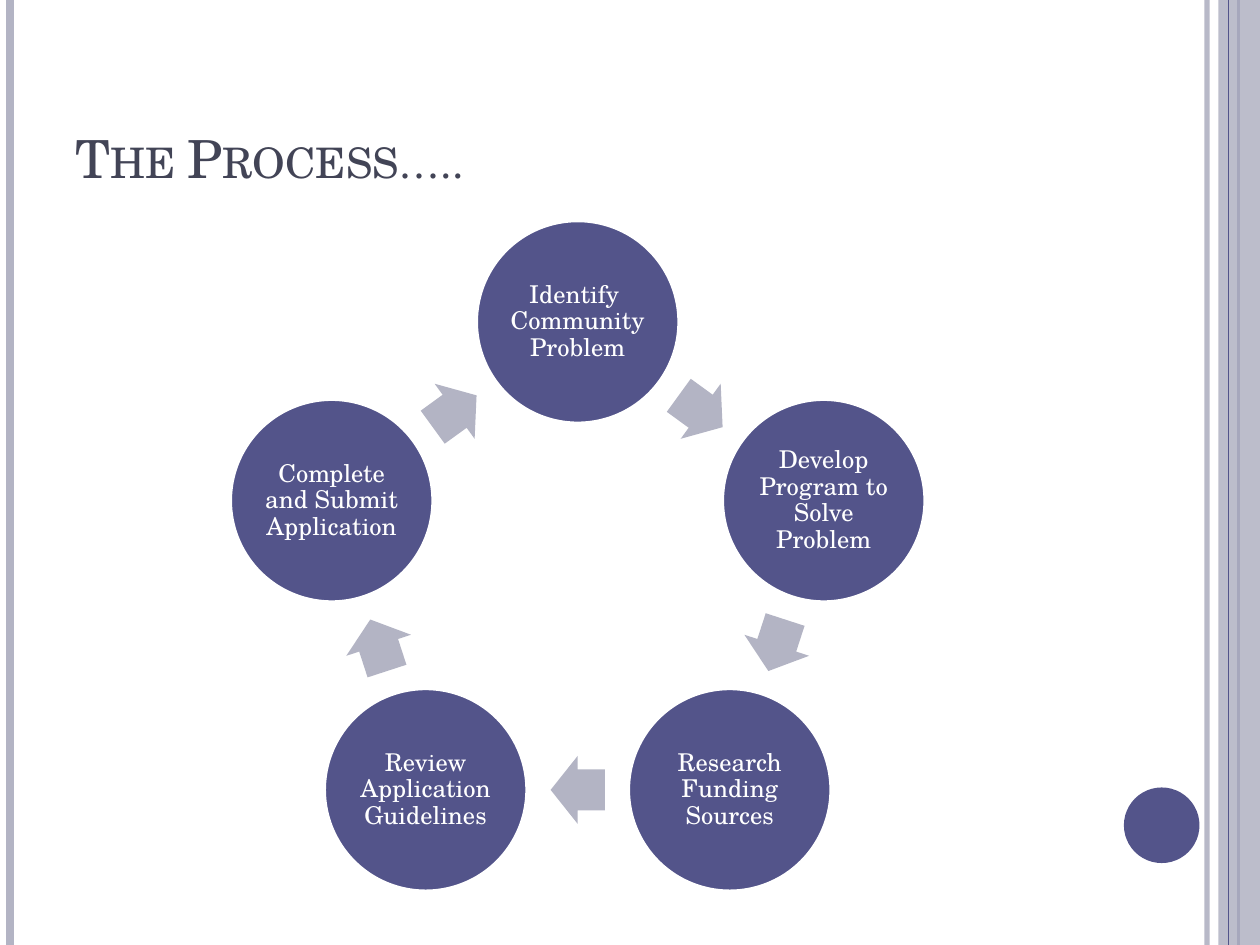
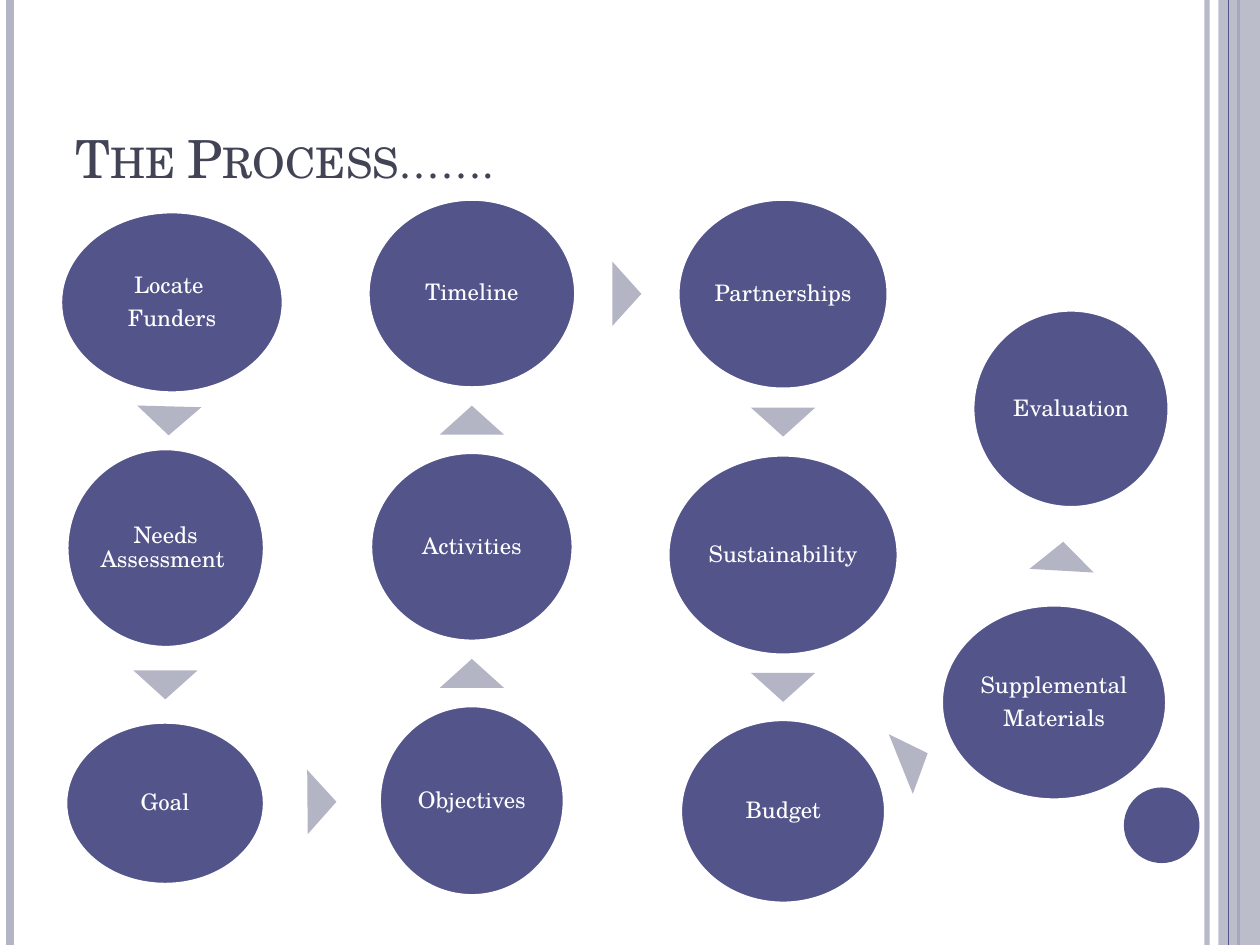
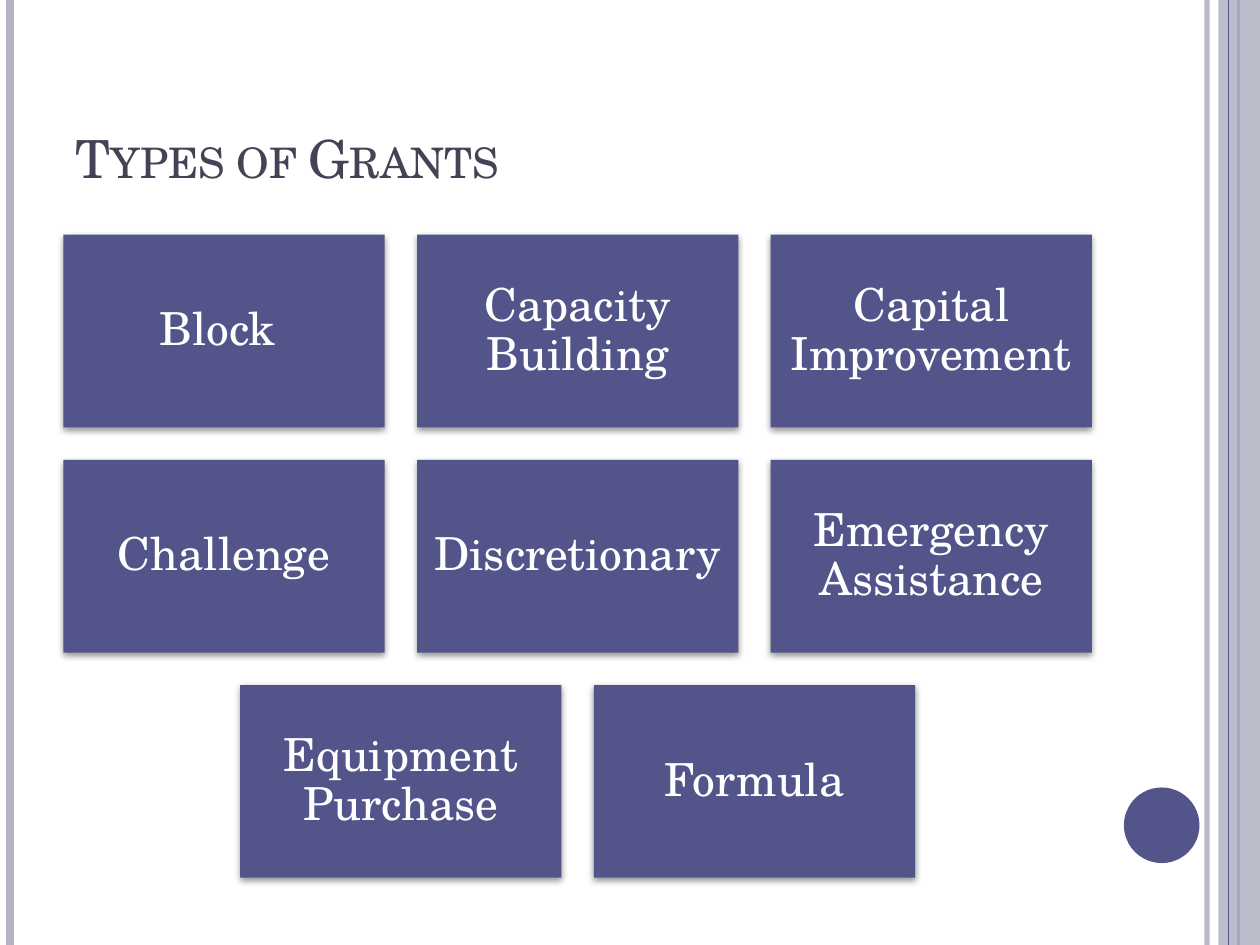
from itertools import pairwise
from math import atan2, cos, degrees, hypot, radians, sin

from lxml.etree import SubElement
from pptx import Presentation
from pptx.dml.color import RGBColor
from pptx.enum.shapes import MSO_CONNECTOR, MSO_SHAPE
from pptx.enum.text import MSO_ANCHOR, MSO_AUTO_SIZE, PP_ALIGN
from pptx.oxml.ns import qn
from pptx.util import Inches, Pt

INDIGO = RGBColor(0x53, 0x54, 0x8A)
LAVENDER = RGBColor(0xB3, 0xB4, 0xC4)
SLATE = RGBColor(0x42, 0x44, 0x56)
WHITE = RGBColor(0xFF, 0xFF, 0xFF)
BLACK = RGBColor(0, 0, 0)

FONT = "TeX Gyre Schola"
COLUMNS, ROWS = 100, 75
TITLE_ONLY = 5

CYCLE_STEPS = [
    "Identify \vCommunity Problem",
    "Develop Program to Solve Problem",
    "Research Funding Sources",
    "Review Application Guidelines",
    "Complete and Submit Application",
]

PROPOSAL_STEPS = [
    ("Locate \nFunders", 13.65, 24, 17.7, 14.4),
    ("Needs Assessment ", 13.15, 43.5, 15.7, 15.8),
    ("Goal", 13.1, 63.75, 15.8, 12.9),
    ("Objectives", 37.45, 63.55, 14.7, 15.1),
    ("Activities", 37.45, 43.4, 16.1, 15),
    ("Timeline", 37.45, 23.3, 16.5, 15),
    ("Partnerships", 62.15, 23.35, 16.7, 15.1),
    ("Sustainability", 62.15, 44.05, 18.3, 15.9),
    ("Budget", 62.15, 64.4, 16.3, 14.6),
    ("Supplemental\nMaterials", 83.65, 55.75, 17.9, 15.5),
    ("Evaluation", 85, 32.45, 15.6, 15.7),
]

GRANT_ROWS = [
    ["Block ", "Capacity Building", "Capital Improvement"],
    ["Challenge", "Discretionary ", "Emergency Assistance"],
    ["Equipment Purchase", "Formula"],
]


class Deck:
    def __init__(self):
        self.presentation = Presentation()
        self.presentation.slide_width = Inches(10)
        self.presentation.slide_height = Inches(7.5)
        self.column = self.presentation.slide_width / COLUMNS
        self.row = self.presentation.slide_height / ROWS
        self.slide = None

    def x(self, columns):
        return round(columns * self.column)

    def y(self, rows):
        return round(rows * self.row)

    def new_slide(self, title):
        layout = self.presentation.slide_layouts[TITLE_ONLY]
        self.slide = self.presentation.slides.add_slide(layout)
        self.frame()
        self.title(title)

    def frame(self):
        self.rule(95.8, LAVENDER, 3, opacity=93)
        self.rule(0.8, LAVENDER, 4.5)
        self.rule(98.3, INDIGO, 1.5)
        band = self.shape(MSO_SHAPE.RECTANGLE, 98.35, 37.5, 3.3, 75, LAVENDER)
        self.set_opacity(band, 87)
        self.rule(97.5, INDIGO, 0.75)
        self.shape(MSO_SHAPE.OVAL, 92.2, 65.5, 6, 6, INDIGO)

    def title(self, text):
        heading = self.slide.shapes.title
        heading.left, heading.top = self.x(5), self.y(3)
        heading.width, heading.height = self.x(81.7), self.y(12.5)
        text_frame = heading.text_frame
        text_frame.text = text
        text_frame.auto_size = MSO_AUTO_SIZE.NONE
        text_frame.vertical_anchor = MSO_ANCHOR.BOTTOM
        paragraph = text_frame.paragraphs[0]
        paragraph.alignment = PP_ALIGN.LEFT
        for run in paragraph.runs:
            self.format_run(run, 30, SLATE)
            run.font._element.set("cap", "small")

    def rule(self, column, color, weight, opacity=100):
        rule = self.slide.shapes.add_connector(
            MSO_CONNECTOR.STRAIGHT, self.x(column), 0, self.x(column), self.y(ROWS))
        rule.line.color.rgb = color
        rule.line.width = Pt(weight)
        SubElement(rule._element.spPr, qn("a:effectLst"))
        if opacity < 100:
            self.set_opacity(rule, opacity)

    def shape(self, preset, center_x, center_y, width, height, color, rotation=0):
        shape = self.slide.shapes.add_shape(
            preset, self.x(center_x - width / 2), self.y(center_y - height / 2),
            self.x(width), self.y(height))
        shape.rotation = rotation
        shape.shadow.inherit = False
        shape.fill.solid()
        shape.fill.fore_color.rgb = color
        shape.line.fill.background()
        return shape

    def bubble(self, label, center_x, center_y, width, height, size):
        bubble = self.shape(MSO_SHAPE.OVAL, center_x, center_y, width, height, INDIGO)
        bubble.line.color.rgb = WHITE
        bubble.line.width = Pt(2)
        self.label(bubble, label, size, inset=0.2)

    def tile(self, label, center_x, center_y, width, height):
        tile = self.shape(MSO_SHAPE.RECTANGLE, center_x, center_y, width, height, INDIGO)
        effects = tile._element.spPr.find(qn("a:effectLst"))
        shadow = SubElement(effects, qn("a:outerShdw"), blurRad=str(Pt(4)),
                            dist=str(Pt(1.6)), dir="5400000", rotWithShape="0")
        shade = SubElement(shadow, qn("a:srgbClr"), val=str(BLACK))
        SubElement(shade, qn("a:alpha"), val="42000")
        self.label(tile, label, 26, inset=1.1)

    def label(self, shape, text, size, inset):
        text_frame = shape.text_frame
        text_frame.text = text
        text_frame.word_wrap = True
        text_frame.vertical_anchor = MSO_ANCHOR.MIDDLE
        text_frame.margin_left = text_frame.margin_right = self.x(inset)
        text_frame.margin_top = text_frame.margin_bottom = self.y(inset)
        for paragraph in text_frame.paragraphs:
            paragraph.alignment = PP_ALIGN.CENTER
            paragraph.line_spacing = 0.9
            paragraph.space_after = Pt(size * 0.35)
            for run in paragraph.runs:
                self.format_run(run, size, WHITE)

    def format_run(self, run, size, color):
        run.font.name = FONT
        run.font.size = Pt(size)
        run.font.bold = False
        run.font.color.rgb = color

    def set_opacity(self, shape, percent):
        for color in shape._element.spPr.iter(qn("a:srgbClr")):
            SubElement(color, qn("a:alpha"), val=str(percent * 1000))


def add_cycle(deck):
    deck.new_slide("The Process…..")
    middle_x, middle_y, radius = 45.85, 46.08, 20.53
    turn = 360 / len(CYCLE_STEPS)
    arrow_radius = radius * cos(radians(turn / 2))
    for index, step in enumerate(CYCLE_STEPS):
        angle = radians(index * turn)
        deck.bubble(step, middle_x + radius * sin(angle),
                    middle_y - radius * cos(angle), 16.1, 16.1, 14)
        heading = (index + 0.5) * turn
        angle = radians(heading)
        arrow = deck.shape(
            MSO_SHAPE.RIGHT_ARROW, middle_x + arrow_radius * sin(angle),
            middle_y - arrow_radius * cos(angle), 4.3, 5.4, LAVENDER, heading)
        arrow.adjustments[0] = 0.6
        arrow.adjustments[1] = 0.5


def add_proposal_path(deck):
    deck.new_slide("The Process…….")
    for step in PROPOSAL_STEPS:
        deck.bubble(*step, size=13)
    for (_, x1, y1, w1, h1), (_, x2, y2, w2, h2) in pairwise(PROPOSAL_STEPS):
        distance = hypot(x2 - x1, y2 - y1)
        across, down = (x2 - x1) / distance, (y2 - y1) / distance
        leave = 0.5 / hypot(across / w1, down / h1)
        arrive = distance - 0.5 / hypot(across / w2, down / h2)
        gap_middle = (leave + arrive) / 2
        deck.shape(MSO_SHAPE.ISOSCELES_TRIANGLE, x1 + across * gap_middle,
                   y1 + down * gap_middle, 5.1, 2.3, LAVENDER,
                   degrees(atan2(down, across)) + 90)


def add_grant_types(deck):
    deck.new_slide("Types of Grants")
    width, height, gap = 25.5, 15.3, 2.57
    for row, grants in enumerate(GRANT_ROWS):
        for position, grant in enumerate(grants):
            offset = position - (len(grants) - 1) / 2
            deck.tile(grant, 45.85 + offset * (width + gap),
                      26.28 + row * (height + gap), width, height)


def main():
    deck = Deck()
    add_cycle(deck)
    add_proposal_path(deck)
    add_grant_types(deck)
    deck.presentation.save("out.pptx")


if __name__ == "__main__":
    main()
